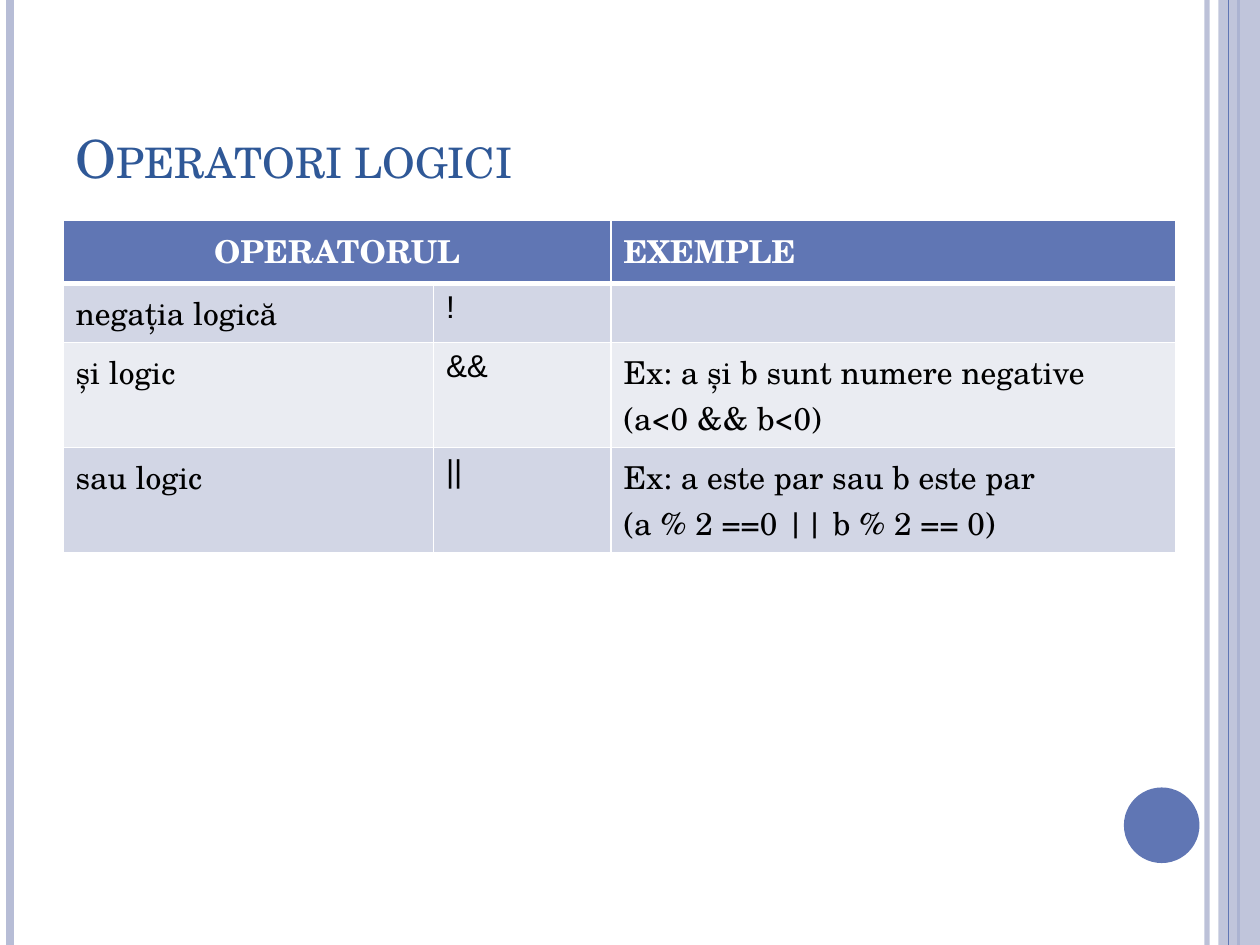
from lxml import etree
from pptx import Presentation
from pptx.dml.color import RGBColor
from pptx.enum import shapes, text
from pptx.oxml.ns import qn
from pptx.util import Inches, Pt

SERIF, SANS = "TeX Gyre Schola", "Arial"
ACCENT, PALE, WHITE, BLACK = "6076B4", "B7BDD6", "FFFFFF", "000000"
BANDS = ["D2D6E5", "EAECF2"]

TITLE = "Operatori logici"
ROWS = [
    ("OPERATORUL", "", "EXEMPLE"),
    ("negația logică", "!", ""),
    ("și logic", "&&", "Ex: a și b sunt numere negative\n(a<0 && b<0)"),
    ("sau logic", "||", "Ex: a este par sau b este par\n(a % 2 ==0 || b % 2 == 0)"),
]
COLUMN_WIDTHS = [2.94, 1.41, 4.48]
ROW_HEIGHTS = [0.5, 0.46, 0.83, 0.83]

# x, colour, width in points, opacity in percent
BACK_LINES = [(9.58, PALE, 3, 93), (0.08, PALE, 4.5, 100), (9.83, ACCENT, 1.5, 100)]
FRONT_LINE = (9.75, ACCENT, 0.75, 100)


def rgb(value):
    return RGBColor.from_string(value)


def set_opacity(element, percent):
    if percent < 100:
        color = next(element.iter(qn("a:srgbClr")))
        etree.SubElement(color, qn("a:alpha"), val=str(percent * 1000))


def add_vertical_line(slide, x, color, width, opacity):
    line = slide.shapes.add_connector(
        shapes.MSO_CONNECTOR.STRAIGHT, Inches(x), 0, Inches(x), Inches(7.5))
    line.line.color.rgb = rgb(color)
    line.line.width = Pt(width)
    properties = line._element.spPr
    set_opacity(properties, opacity)
    etree.SubElement(properties, qn("a:effectLst"))


def add_solid_shape(slide, kind, box, color, opacity=100):
    shape = slide.shapes.add_shape(kind, *map(Inches, box))
    shape.shadow.inherit = False
    shape.fill.solid()
    shape.fill.fore_color.rgb = rgb(color)
    shape.line.fill.background()
    set_opacity(shape._element.spPr, opacity)


def add_run(paragraph, content, font, size, color, bold=False):
    run = paragraph.add_run()
    run.text = content
    run.font.name = font
    run.font.size = Pt(size)
    run.font.bold = bold
    run.font.color.rgb = rgb(color)
    return run


def set_borders(cell, top, bottom):
    """White borders; top and bottom widths in points, 1 at the sides."""
    properties = cell._tc.get_or_add_tcPr()
    sides = [("a:lnL", 1), ("a:lnR", 1), ("a:lnT", top), ("a:lnB", bottom)]
    for index, (tag, width) in enumerate(sides):
        border = etree.Element(qn(tag), w=str(Pt(width)))
        fill = etree.SubElement(border, qn("a:solidFill"))
        etree.SubElement(fill, qn("a:srgbClr"), val=WHITE)
        properties.insert(index, border)


def add_title(slide):
    title = slide.shapes.title
    title.left, title.top, title.width, title.height = map(Inches, (0.5, 0.3, 8.17, 1.25))
    title.text_frame.vertical_anchor = text.MSO_ANCHOR.BOTTOM
    paragraph = title.text_frame.paragraphs[0]
    paragraph.alignment = text.PP_ALIGN.LEFT
    run = add_run(paragraph, TITLE, SERIF, 30, "2F5897")
    run.font._element.set("cap", "small")


def add_operator_table(slide):
    table = slide.shapes.add_table(
        len(ROWS), len(COLUMN_WIDTHS), Inches(0.5), Inches(1.75),
        Inches(sum(COLUMN_WIDTHS)), Inches(sum(ROW_HEIGHTS))).table
    for column, width in zip(table.columns, COLUMN_WIDTHS):
        column.width = Inches(width)
    for row, height in zip(table.rows, ROW_HEIGHTS):
        row.height = Inches(height)
    for r, contents in enumerate(ROWS):
        header = r == 0
        for c, content in enumerate(contents):
            cell = table.cell(r, c)
            cell.fill.solid()
            cell.fill.fore_color.rgb = rgb(ACCENT if header else BANDS[(r - 1) % 2])
            set_borders(cell, top=3 if r == 1 else 1, bottom=3 if header else 1)
            if not content:
                continue
            for i, line in enumerate(content.split("\n")):
                frame = cell.text_frame
                paragraph = frame.add_paragraph() if i else frame.paragraphs[0]
                add_run(paragraph, line, SANS if c == 1 else SERIF, 18,
                        WHITE if header else BLACK, header)
    table.cell(0, 0).merge(table.cell(0, 1))
    table.cell(0, 0).text_frame.paragraphs[0].alignment = text.PP_ALIGN.CENTER


def main():
    presentation = Presentation()
    presentation.slide_width, presentation.slide_height = Inches(10), Inches(7.5)
    slide = presentation.slides.add_slide(presentation.slide_layouts[5])
    for line in BACK_LINES:
        add_vertical_line(slide, *line)
    add_solid_shape(slide, shapes.MSO_SHAPE.RECTANGLE, (9.67, 0, 0.33, 7.5), PALE, 87)
    add_vertical_line(slide, *FRONT_LINE)
    add_solid_shape(slide, shapes.MSO_SHAPE.OVAL, (8.92, 6.25, 0.6, 0.6), ACCENT)
    add_title(slide)
    add_operator_table(slide)
    presentation.save("out.pptx")


if __name__ == "__main__":
    main()
